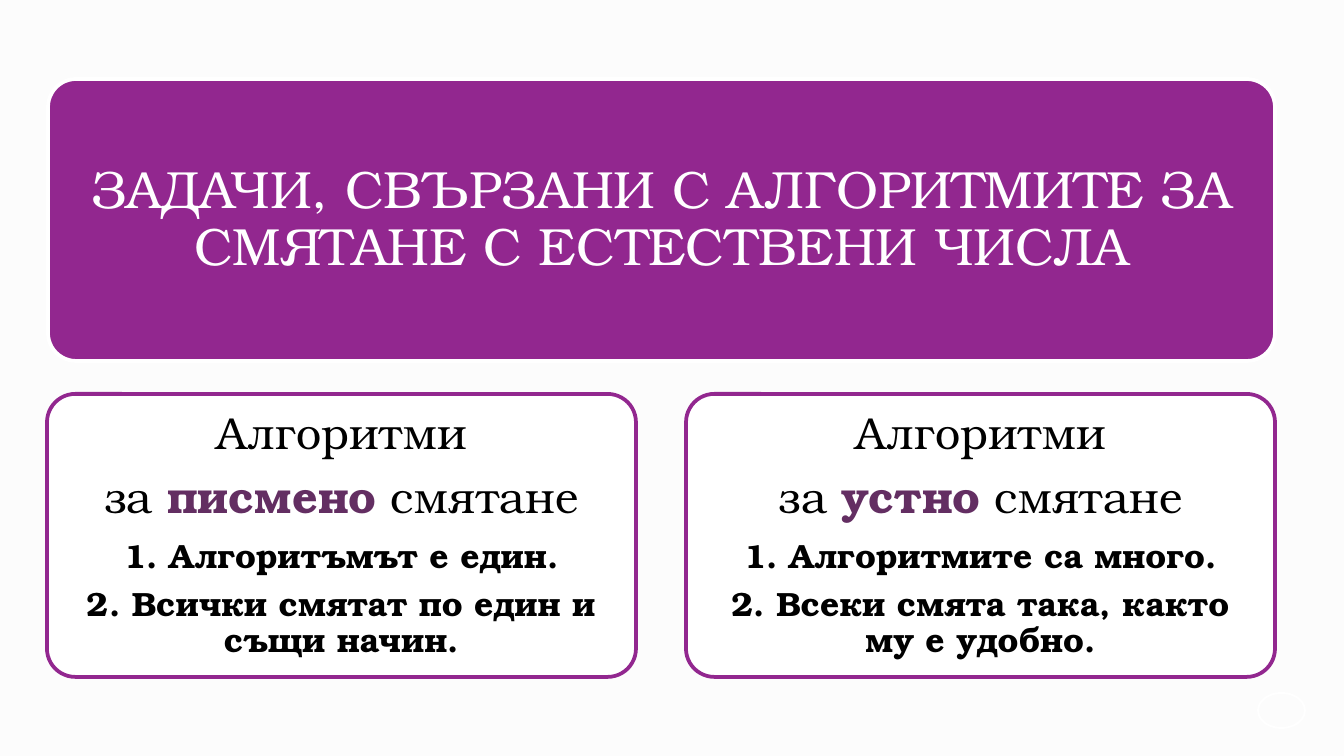
from pptx import Presentation
from pptx.dml.color import RGBColor
from pptx.enum.shapes import MSO_SHAPE
from pptx.enum.text import MSO_ANCHOR, MSO_AUTO_SIZE, PP_ALIGN
from pptx.oxml.ns import qn
from pptx.util import Pt
from lxml import etree

ROUNDED = MSO_SHAPE.ROUNDED_RECTANGLE
OVAL = MSO_SHAPE.OVAL
MIDDLE = MSO_ANCHOR.MIDDLE
NO_FIT = MSO_AUTO_SIZE.NONE
CENTER = PP_ALIGN.CENTER

EMU_PER_PX = 914400 / 134.4
FONT = "TeX Gyre Bonum"
COLORS = {
    "page": "FCFCFC",
    "white": "FFFFFF",
    "purple": "92278F",
    "accent": "632E62",
    "black": "000000",
}
TITLE = "ЗАДАЧИ, СВЪРЗАНИ С АЛГОРИТМИТЕ ЗА СМЯТАНЕ С ЕСТЕСТВЕНИ ЧИСЛА"
CARDS = [
    ("писмено", ["1. Алгоритъмът е един.",
                 "2. Всички смятат по един и същи начин."]),
    ("устно", ["1. Алгоритмите са много.",
               "2. Всеки смята така, както му е удобно."]),
]
CARD_LEFT, CARD_TOP, CARD_WIDTH, CARD_HEIGHT, CARD_STEP = 47, 394, 589, 283, 639
TEXT_MARGIN = 8
HEADING_SHIFT = 31


def px(length):
    return round(length * EMU_PER_PX)


def color(name):
    return RGBColor.from_string(COLORS[name])


def add_outline(page, kind, box, line, width, fill=None):
    shape = page.shapes.add_shape(kind, *map(px, box))
    shape.shadow.inherit = False
    if fill:
        shape.fill.solid()
        shape.fill.fore_color.rgb = color(fill)
    else:
        shape.fill.background()
    shape.line.color.rgb = color(line)
    shape.line.width = Pt(width)
    if kind == ROUNDED:
        shape.adjustments[0] = 0.1
    return shape


def place_text(holder, panel, box, inset):
    """Put a placeholder inside the box, in front of its panel."""
    left, top, width, height = box
    holder.left, holder.top = px(left + TEXT_MARGIN), px(top + TEXT_MARGIN)
    holder.width = px(width - 2 * TEXT_MARGIN)
    holder.height = px(height - 2 * TEXT_MARGIN)
    panel.element.addnext(holder.element)
    frame = holder.text_frame
    frame.word_wrap = True
    frame.auto_size = NO_FIT
    frame.vertical_anchor = MIDDLE
    frame.margin_left = frame.margin_right = px(inset)
    frame.margin_top = frame.margin_bottom = px(inset)
    return frame


def format_paragraph(para, size, ink, bold=False, shift=0):
    properties = para._p.get_or_add_pPr()
    properties.set("marL", "0")
    properties.set("indent", str(-px(shift)))
    etree.SubElement(properties, qn("a:buNone"))
    para.alignment = CENTER
    para.line_spacing = 0.9
    para.space_before = Pt(0)
    para.space_after = Pt(round(size * 0.35, 1))
    para.font.name = FONT
    para.font.size = Pt(size)
    para.font.bold = bold
    para.font.color.rgb = color(ink)


def add_banner(page, box):
    panel = add_outline(page, ROUNDED, box, "white", 2, "purple")
    frame = place_text(page.shapes.title, panel, box, 16)
    frame.text = TITLE
    format_paragraph(frame.paragraphs[0], 28, "white")


def add_card(page, holder, box, method, points):
    panel = add_outline(page, ROUNDED, box, "purple", 2, "white")
    frame = place_text(holder, panel, box, 13)

    # Two-line heading with the method picked out
    heading = frame.paragraphs[0]
    heading.text = "Алгоритми"
    format_paragraph(heading, 24, "black", shift=HEADING_SHIFT)
    subject = frame.add_paragraph()
    format_paragraph(subject, 24, "black")
    for text in ("за ", method, " смятане"):
        span = subject.add_run()
        span.text = text
        span.font.name = FONT
        span.font.size = Pt(24)
        span.font.bold = text == method
        span.font.color.rgb = color("accent" if text == method else "black")

    # Numbered statements
    for point in points:
        para = frame.add_paragraph()
        para.text = point
        format_paragraph(para, 18, "black", bold=True)


def main():
    deck = Presentation()
    deck.slide_width, deck.slide_height = px(1344), px(756)
    page = deck.slides.add_slide(deck.slide_layouts[3])
    page.background.fill.solid()
    page.background.fill.fore_color.rgb = color("page")

    # Page number ring
    add_outline(page, OVAL, (1258, 693, 47, 35), "white", 1)

    add_banner(page, (48, 79, 1227, 282))
    for index, (method, points) in enumerate(CARDS):
        box = (CARD_LEFT + index * CARD_STEP, CARD_TOP, CARD_WIDTH, CARD_HEIGHT)
        add_card(page, page.placeholders[index + 1], box, method, points)

    deck.save("out.pptx")


if __name__ == "__main__":
    main()
